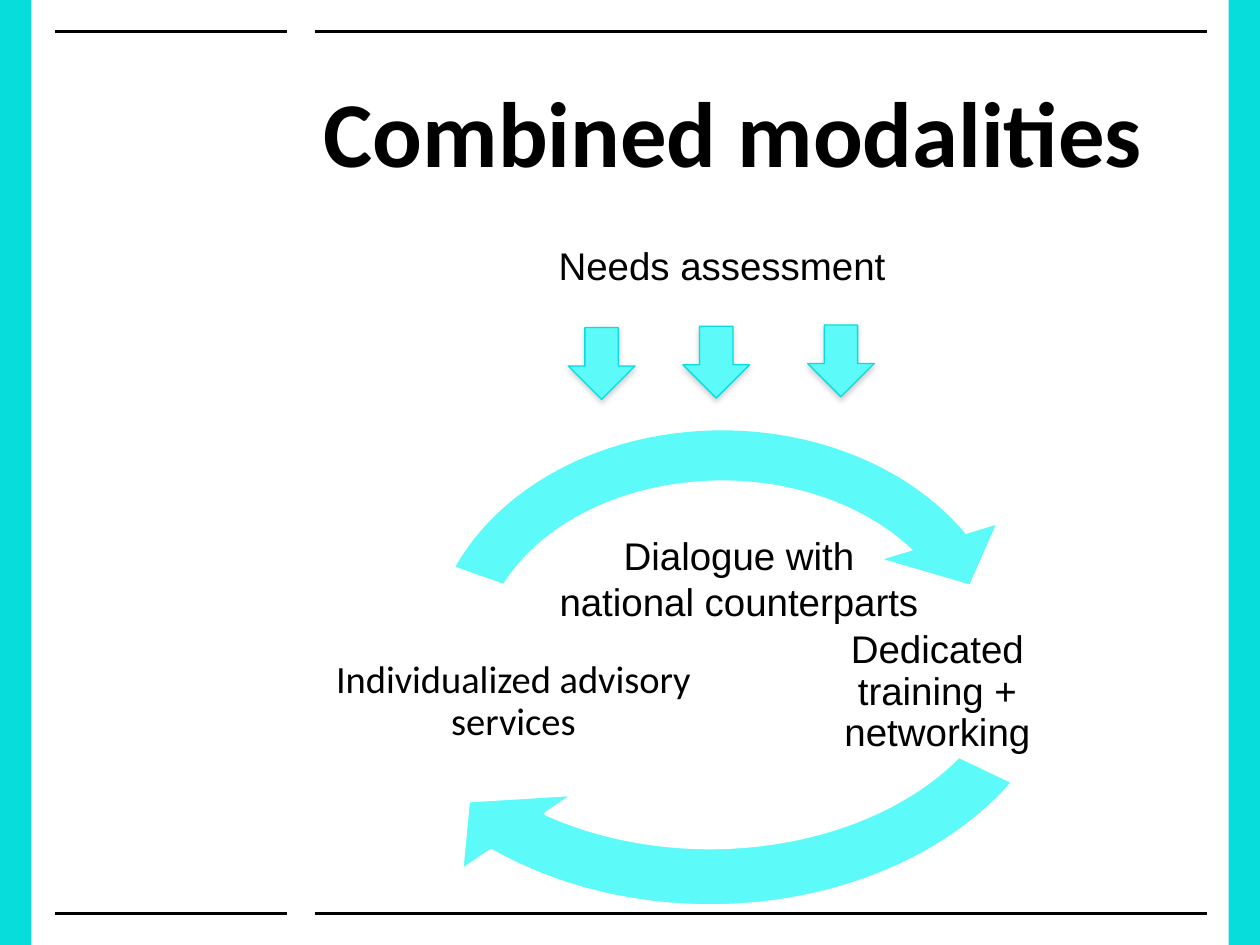
import pptx
import pptx.dml.color
import pptx.enum.shapes
import pptx.enum.text
import pptx.oxml
import pptx.oxml.ns
import pptx.util

Inches = pptx.util.Inches
Pt = pptx.util.Pt
RGBColor = pptx.dml.color.RGBColor
SHAPE = pptx.enum.shapes.MSO_SHAPE
ANCHOR = pptx.enum.text.MSO_ANCHOR
ALIGN = pptx.enum.text.PP_ALIGN

BLACK = RGBColor(0x00, 0x00, 0x00)
WHITE = RGBColor(0xFF, 0xFF, 0xFF)
TEAL = RGBColor(0x07, 0xDE, 0xDB)
AQUA = RGBColor(0x5C, 0xFA, 0xF8)

NAMESPACE = pptx.oxml.ns.nsdecls("a")
NO_EFFECT = f"<a:effectLst {NAMESPACE}/>"
SOFT_SHADOW = (
    f'<a:effectLst {NAMESPACE}><a:outerShdw blurRad="{Pt(3.1)}" dist="{Pt(1.8)}" '
    'dir="5400000" rotWithShape="0"><a:srgbClr val="808080">'
    '<a:alpha val="35000"/></a:srgbClr></a:outerShdw></a:effectLst>'
)


class SlideBuilder:
    heading_font = "Calibri"
    label_font = "Arial"
    label_size = 22

    def __init__(self, page):
        self.page = page

    def place(self, shape, left, top, width, height):
        shape.left, shape.top = Inches(left), Inches(top)
        shape.width, shape.height = Inches(width), Inches(height)

    def set_text(self, box, text, font, size, align, bold=False, spacing=None,
                 inset=0, anchor=ANCHOR.TOP, wrap=True):
        frame = box.text_frame
        frame.text = text
        frame.word_wrap = wrap
        frame.auto_size = pptx.enum.text.MSO_AUTO_SIZE.NONE
        frame.vertical_anchor = anchor
        frame.margin_left = frame.margin_right = Inches(inset)
        frame.margin_top = frame.margin_bottom = Inches(inset)
        for para in frame.paragraphs:
            para.alignment = align
            para.space_before = Pt(0)
            if spacing:
                para.line_spacing = spacing
            for span in para.runs:
                span.font.name = font
                span.font.size = Pt(size)
                span.font.bold = bold
                span.font.color.rgb = BLACK

    def title(self, text, *place):
        box = self.page.shapes.title
        self.place(box, *place)
        self.set_text(box, text, self.heading_font, 53, ALIGN.LEFT, bold=True)

    def label(self, text, *place, font=label_font, **style):
        box = self.page.shapes.add_textbox(0, 0, 0, 0)
        self.place(box, *place)
        self.set_text(box, text, font, self.label_size, ALIGN.CENTER, **style)

    def shape(self, kind, *place, fill=AQUA, line=None, line_width=0.75, adjustments=()):
        shape = self.page.shapes.add_shape(kind, 0, 0, 0, 0)
        self.place(shape, *place)
        for index, value in enumerate(adjustments):
            shape.adjustments[index] = value
        shape.shadow.inherit = False
        shape.fill.solid()
        shape.fill.fore_color.rgb = fill
        if line is None:
            shape.line.fill.background()
        else:
            shape.line.color.rgb = line
            shape.line.width = Pt(line_width)
        return shape

    def down_arrow(self, left, top):
        arrow = self.shape(SHAPE.DOWN_ARROW, left, top, 0.53, 0.57, line=TEAL)
        properties = arrow._element.spPr
        properties.remove(properties.find(pptx.oxml.ns.qn("a:effectLst")))
        properties.append(pptx.oxml.parse_xml(SOFT_SHADOW))

    def cycle_arrow(self, end, start, *place, line=None):
        self.shape(SHAPE.CIRCULAR_ARROW, *place, line=line, line_width=2,
                   adjustments=(0.095, 6.854, end, start, 0.111))

    def rule(self, left, right, height):
        line = self.page.shapes.add_connector(
            pptx.enum.shapes.MSO_CONNECTOR.STRAIGHT,
            Inches(left), Inches(height), Inches(right), Inches(height))
        line.line.color.rgb = BLACK
        line.line.width = Pt(2)
        line._element.spPr.append(pptx.oxml.parse_xml(NO_EFFECT))


def main():
    deck = pptx.Presentation()
    deck.slide_width, deck.slide_height = Inches(10), Inches(7.5)
    page = deck.slides.add_slide(deck.slide_layouts[5])
    builder = SlideBuilder(page)

    for left in (0, 9.75):
        builder.shape(SHAPE.RECTANGLE, left, 0, 0.25, 7.5, fill=TEAL)
    for height in (0.25, 7.25):
        builder.rule(0.44, 2.28, height)
        builder.rule(2.5, 9.58, height)

    builder.title("Combined modalities", 2.57, 0.59, 7.09, 0.89)

    cycle_label = {"spacing": 0.9, "inset": 0.03, "anchor": ANCHOR.MIDDLE}
    builder.label("Dedicated training + networking", 6.49, 4.67, 1.9, 1.66, **cycle_label)
    builder.cycle_arrow(80.73, 15.28, 2.47, 2.62, 6.33, 4.88, line=WHITE)
    builder.label("Individualized advisory services", 2.57, 4.61, 3.01, 1.92,
                  font=builder.heading_font, **cycle_label)
    builder.cycle_arrow(198.92, 119.59, 3.15, 3.15, 5.16, 4.18)

    builder.label("Needs assessment", 4.42, 1.92, 2.62, 0.37, wrap=False)
    for left, top in ((4.51, 2.6), (5.42, 2.59), (6.41, 2.58)):
        builder.down_arrow(left, top)
    builder.label("Dialogue with\nnational counterparts", 4.42, 4.22, 2.89, 0.74, wrap=False)

    deck.save("out.pptx")


if __name__ == "__main__":
    main()
